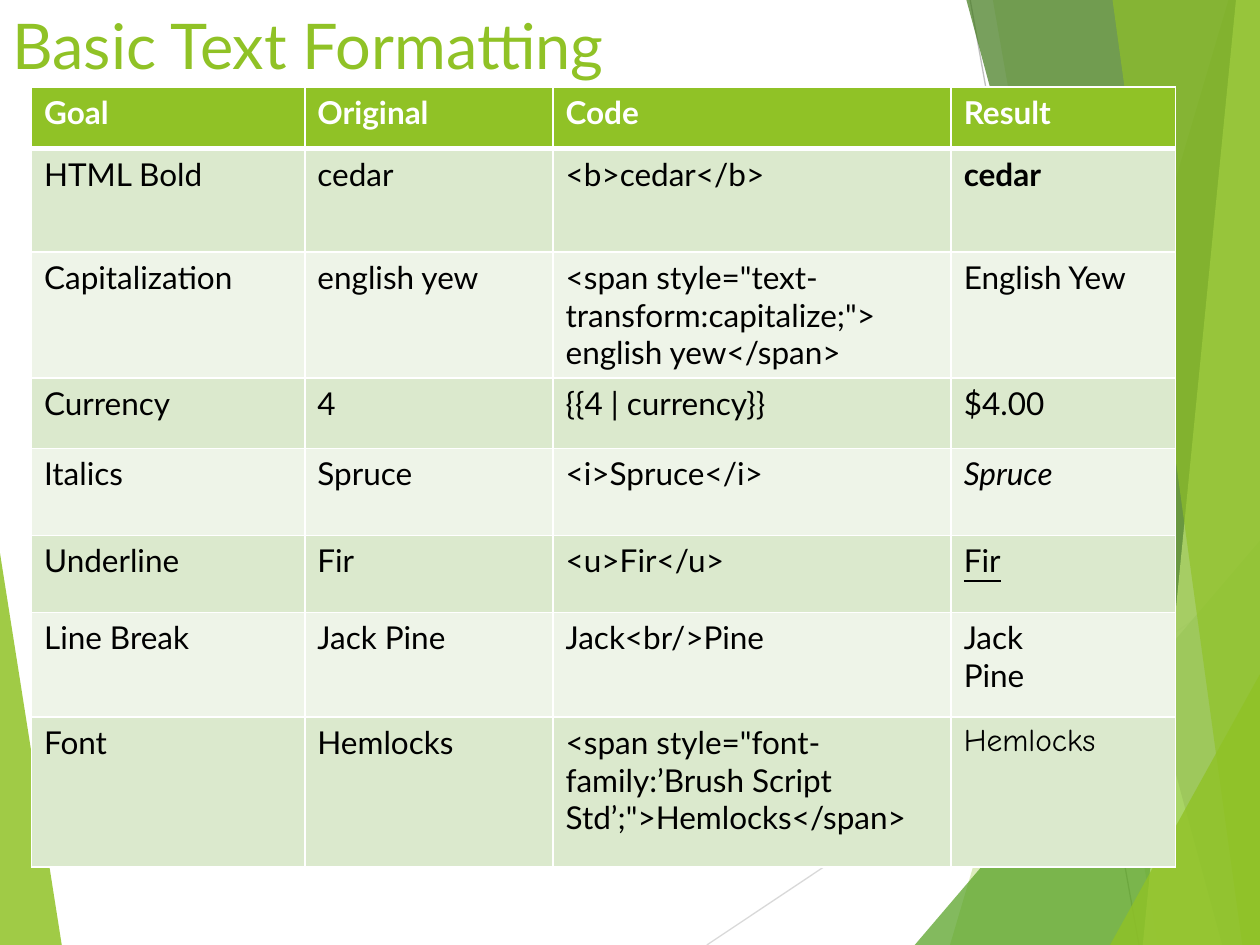
from lxml.etree import SubElement
from pptx import Presentation
from pptx.dml.color import RGBColor
from pptx.enum.shapes import MSO_CONNECTOR
from pptx.enum.text import MSO_ANCHOR, PP_ALIGN
from pptx.oxml.ns import qn
from pptx.util import Inches, Pt

GREEN = RGBColor(0x90, 0xC2, 0x26)
MID_GREEN = RGBColor(0x54, 0xA0, 0x21)
DARK_GREEN = RGBColor(0x3F, 0x78, 0x19)
LIME = RGBColor(0xC0, 0xE4, 0x74)
BAND_DARK = RGBColor(0xDB, 0xE9, 0xCD)
BAND_LIGHT = RGBColor(0xEE, 0xF4, 0xE8)
WHITE = RGBColor(0xFF, 0xFF, 0xFF)
BLACK = RGBColor(0, 0, 0)
LIGHT_GRAY = RGBColor(0xD9, 0xD9, 0xD9)
GRAY = RGBColor(0xBF, 0xBF, 0xBF)

FONT = "Lato"
WIDTH, HEIGHT = 10, 7.5

TITLE = "Basic Text Formatting"
HEADINGS = ["Goal", "Original", "Code", "Result"]
# Goal, original, code, result, font settings of the result
EXAMPLES = [
    ("HTML Bold", "cedar", "<b>cedar</b>", "cedar", {"bold": True}),
    ("Capitalization", "english yew",
     '<span style="text-transform:capitalize;">\venglish yew</span>', "English Yew", {}),
    ("Currency", "4", "{{4 | currency}}", "$4.00", {}),
    ("Italics", "Spruce", "<i>Spruce</i>", "Spruce", {"italic": True}),
    ("Underline", "Fir", "<u>Fir</u>", "Fir", {"underline": True}),
    ("Line Break", "Jack Pine", "Jack<br/>Pine", "Jack\nPine", {}),
    ("Font", "Hemlocks",
     '<span style="font-family:’Brush Script Std’;">Hemlocks</span>', "Hemlocks",
     {"name": "Comic Neue"}),
]
COLUMN_WIDTHS = [2.17, 1.97, 3.16, 1.78]
ROW_HEIGHTS = [0.49, 0.82, 1, 0.56, 0.69, 0.61, 0.83, 1.19]

# Start, end, colour
RAYS = [
    ((5.61, HEIGHT), (WIDTH, 4.57), LIGHT_GRAY),
    ((7.7, 0), (9.04, HEIGHT), GRAY),
]
# Corners, colour, opacity in percent
LEFT_FACET = ([(0, 4.39), (0.49, HEIGHT), (0, HEIGHT)], GREEN, 85)


def right_facet(top, bottom, colour, opacity, start=0):
    """Facet from a slanted edge to the right side of the slide."""
    corners = [(top, start), (bottom, HEIGHT), (WIDTH, HEIGHT), (WIDTH, start)]
    return corners, colour, opacity


RIGHT_FACETS = [
    right_facet(9.75, 7.54, GREEN, 30),
    right_facet(7.88, 9.19, GREEN, 20),
    right_facet(WIDTH, 7.26, MID_GREEN, 72, start=4.29),
    right_facet(7.67, 9.7, DARK_GREEN, 70),
    right_facet(9.81, 9.07, LIME, 70),
    right_facet(8.83, 9.86, GREEN, 65),
    right_facet(WIDTH, 8.81, GREEN, 80, start=5.35),
]


def add_facet(slide, corners, colour, opacity):
    points = [(Inches(x), Inches(y)) for x, y in corners]
    builder = slide.shapes.build_freeform(*points[0])
    builder.add_line_segments(points[1:], close=True)
    facet = builder.convert_to_shape()
    facet.shadow.inherit = False
    facet.line.fill.background()
    facet.fill.solid()
    facet.fill.fore_color.rgb = colour
    colour_xml = facet._element.spPr.find(qn("a:solidFill"))[0]
    SubElement(colour_xml, qn("a:alpha"), val=str(opacity * 1000))


def add_ray(slide, start, end, colour):
    ray = slide.shapes.add_connector(
        MSO_CONNECTOR.STRAIGHT, *(Inches(v) for v in start + end))
    ray.line.color.rgb = colour
    ray.line.width = Pt(0.75)
    SubElement(ray._element.spPr, qn("a:effectLst"))


def add_run(paragraph, text, size, colour, name=FONT, **settings):
    run = paragraph.add_run()
    run.text = text
    run.font.size = Pt(size)
    run.font.color.rgb = colour
    run.font.name = name
    for setting, value in settings.items():
        setattr(run.font, setting, value)


def fill_cell(cell, text, colour, background, bottom_border=1, **settings):
    """Write text: a newline starts a paragraph, a vertical tab breaks the line."""
    properties = cell._tc.get_or_add_tcPr()
    for side, width in (("L", 1), ("R", 1), ("T", 1), ("B", bottom_border)):
        border = SubElement(properties, qn(f"a:ln{side}"), w=str(Pt(width)))
        SubElement(SubElement(border, qn("a:solidFill")), qn("a:srgbClr"), val=str(WHITE))
    cell.fill.solid()
    cell.fill.fore_color.rgb = background
    frame = cell.text_frame
    for index, line in enumerate(text.split("\n")):
        paragraph = frame.add_paragraph() if index else frame.paragraphs[0]
        for part_index, part in enumerate(line.split("\v")):
            if part_index:
                paragraph.add_line_break()
            add_run(paragraph, part, 18, colour, **settings)


def add_title(slide):
    box = slide.shapes.add_textbox(0, 0, Inches(6.94), Inches(1.43))
    frame = box.text_frame
    frame.word_wrap = True
    frame.vertical_anchor = MSO_ANCHOR.TOP
    frame.paragraphs[0].alignment = PP_ALIGN.LEFT
    add_run(frame.paragraphs[0], TITLE, 36, GREEN)


def add_examples(slide):
    table = slide.shapes.add_table(
        len(ROW_HEIGHTS), len(COLUMN_WIDTHS), Inches(0.25), Inches(0.69),
        Inches(sum(COLUMN_WIDTHS)), Inches(sum(ROW_HEIGHTS))).table
    for column, width in zip(table.columns, COLUMN_WIDTHS):
        column.width = Inches(width)
    for row, height in zip(table.rows, ROW_HEIGHTS):
        row.height = Inches(height)
    for column, heading in enumerate(HEADINGS):
        fill_cell(table.cell(0, column), heading, WHITE, GREEN,
                  bottom_border=3, bold=True)
    for row, (*texts, result_font) in enumerate(EXAMPLES, start=1):
        background = BAND_DARK if row % 2 else BAND_LIGHT
        for column, text in enumerate(texts):
            settings = {"bold": False}
            if HEADINGS[column] == "Result":
                settings.update(result_font)
            fill_cell(table.cell(row, column), text, BLACK, background,
                      bottom_border=1, **settings)


def main():
    deck = Presentation()
    deck.slide_width, deck.slide_height = Inches(WIDTH), Inches(HEIGHT)
    slide = deck.slides.add_slide(deck.slide_layouts[6])
    add_facet(slide, *LEFT_FACET)
    for ray in RAYS:
        add_ray(slide, *ray)
    for facet in RIGHT_FACETS:
        add_facet(slide, *facet)
    add_title(slide)
    add_examples(slide)
    deck.save("out.pptx")


if __name__ == "__main__":
    main()
